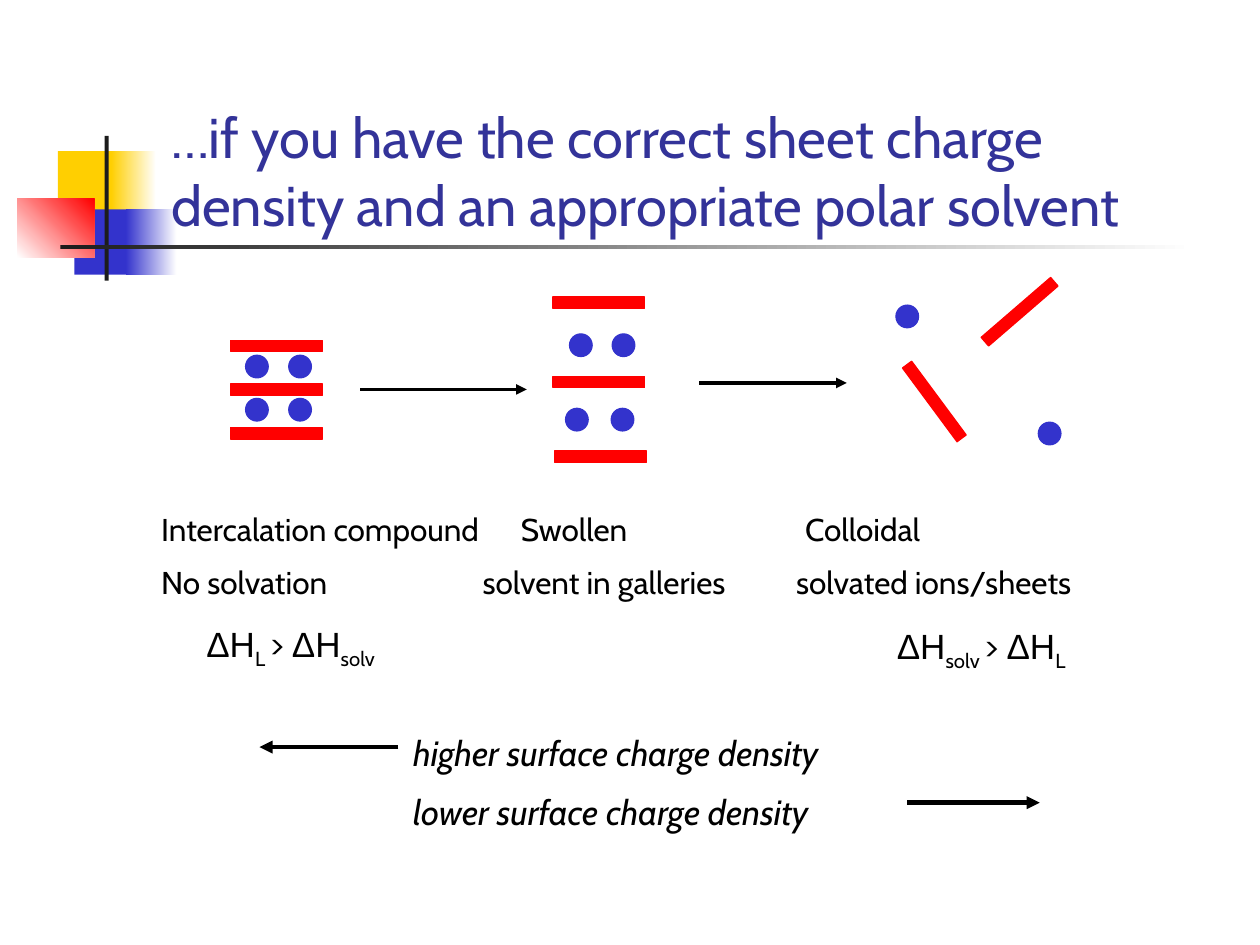
from lxml.etree import SubElement
from pptx import Presentation
from pptx.dml.color import RGBColor
from pptx.enum.shapes import MSO_CONNECTOR, MSO_SHAPE
from pptx.enum.text import MSO_ANCHOR
from pptx.oxml.ns import qn
from pptx.util import Cm, Pt

COLORS = {
    "yellow": "FFCF01",
    "blue": "3333CC",
    "red": "FF0000",
    "dark": "1C1C1C",
    "white": "FFFFFF",
    "black": "000000",
    "title": "333399",
}
RGB = {name: RGBColor.from_string(value) for name, value in COLORS.items()}

presentation = Presentation()
presentation.slide_width = Cm(25.4)
presentation.slide_height = Cm(19.05)
slide = presentation.slides.add_slide(presentation.slide_layouts[6])


def add_filled(kind, left, top, width, height, start, end=None, angle=0):
    """Add an unlined shape, with a gradient fill when an end colour is given."""
    shape = slide.shapes.add_shape(kind, Cm(left), Cm(top), Cm(width), Cm(height))
    shape.shadow.inherit = False
    shape.line.fill.background()
    if end is None:
        shape.fill.solid()
        shape.fill.fore_color.rgb = RGB[start]
    else:
        shape.fill.gradient()
        shape.fill.gradient_angle = angle
        for stop, color in zip(shape.fill.gradient_stops, (start, end)):
            stop.color.rgb = RGB[color]
    return shape


def add_text_frame(left, top, width, height, wrap=True):
    box = slide.shapes.add_textbox(Cm(left), Cm(top), Cm(width), Cm(height))
    box.text_frame.word_wrap = wrap
    return box.text_frame


# Corner decoration: left, top, width, height, colours, angle
decoration = [
    (1.17, 3.05, 1.22, 1.32, "yellow"),
    (2.24, 3.05, 0.91, 1.32, "yellow", "white"),
    (1.5, 4.22, 1.17, 1.32, "blue"),
    (2.54, 4.22, 1.02, 1.32, "blue", "white"),
    (0.35, 4.01, 1.55, 1.18, "white", "red", 45),
    (2.11, 2.74, 0.08, 2.92, "dark"),
    (1.22, 4.94, 22.86, 0.09, "dark", "white"),
]
for block in decoration:
    add_filled(MSO_SHAPE.RECTANGLE, *block)

# Title
title = add_text_frame(3.2, 1.73, 21.64, 3.18)
title.vertical_anchor = MSO_ANCHOR.BOTTOM
paragraph = title.paragraphs[0]
paragraph.text = "…if you have the correct sheet charge density and an appropriate polar solvent"
paragraph.font.name = "Cabin"
paragraph.font.size = Pt(32)
paragraph.font.color.rgb = RGB["title"]

# Sheets (left, top, rotation) and ions (left, top) of the three states
sheets = [(4.65, 6.86 + 0.88 * row, 0) for row in range(3)]
sheets += [(11.15, 5.99, 0), (11.15, 7.59, 0), (11.18, 9.09, 0)]
sheets += [(19.63, 6.17, 319.2), (17.91, 7.98, 53.5)]
ions = [(left, top) for top in (7.16, 8.03) for left in (4.95, 5.82)]
ions += [(11.48, 6.73), (12.34, 6.73), (11.4, 8.23), (12.32, 8.23)]
ions += [(18.06, 6.15), (20.93, 8.51)]

for left, top, rotation in sheets:
    sheet = add_filled(MSO_SHAPE.RECTANGLE, left, top, 1.85, 0.23, "red")
    sheet.rotation = rotation
    sheet.line.color.rgb = RGB["red"]
    sheet.line.width = Pt(0.75)
for left, top in ions:
    ion = add_filled(MSO_SHAPE.OVAL, left, top, 0.46, 0.46, "blue")
    ion.line.color.rgb = RGB["blue"]
    ion.line.width = Pt(0.63)

# Arrows: start, end, height on the slide, line width
arrows = [
    (7.26, 10.62, 7.85, 2),
    (14.1, 17.07, 7.72, 2),
    (8.03, 5.23, 15.06, 2.5),
    (18.29, 20.96, 16.18, 2.5),
]
for start, end, height, width in arrows:
    arrow = slide.shapes.add_connector(
        MSO_CONNECTOR.STRAIGHT, Cm(start), Cm(height), Cm(end), Cm(height))
    arrow.line.color.rgb = RGB["black"]
    arrow.line.width = Pt(width)
    SubElement(arrow.line._get_or_add_ln(), qn("a:tailEnd"), type="triangle")
    SubElement(arrow._element.spPr, qn("a:effectLst"))

# Text blocks: frame, size, gap before the second line, italic, lines with tab stops
text_blocks = [
    (add_text_frame(3, 10.16, 21.26, 2.18), 18, 8.5, False, [
        ("Intercalation compound\tSwollen\tColloidal", (7.25, 12.98)),
        ("No solvation\tsolvent in galleries\tsolvated ions/sheets", (6.48, 12.8)),
    ]),
    (add_text_frame(8.08, 14.63, 10.49, 2.03), 20, 9.5, True, [
        ("higher surface charge density", ()),
        ("lower surface charge density", ()),
    ]),
]
for frame, size, gap, italic, lines in text_blocks:
    for index, (text, stops) in enumerate(lines):
        paragraph = frame.add_paragraph() if index else frame.paragraphs[0]
        paragraph.text = text
        paragraph.space_before = Pt(gap if index else 0)
        paragraph.font.name = "Cabin"
        paragraph.font.size = Pt(size)
        paragraph.font.italic = italic
        paragraph.font.color.rgb = RGB["black"]
        if stops:
            properties = paragraph._p.get_or_add_pPr()
            tab_list = SubElement(properties, qn("a:tabLst"))
            properties.find(qn("a:defRPr")).addprevious(tab_list)
            for stop in stops:
                SubElement(tab_list, qn("a:tab"), pos=str(Cm(stop)), algn="l")

# Enthalpy comparisons: left, top, larger and smaller term
for left, top, larger, smaller in [(3.91, 12.42, "L", "solv"), (17.83, 12.47, "solv", "L")]:
    paragraph = add_text_frame(left, top, 4.83, 1.09, wrap=False).paragraphs[0]
    paragraph.font.size = Pt(20)
    paragraph.font.color.rgb = RGB["black"]
    pieces = [("ΔΗ", "Arial", 0), (larger + " ", "Cabin", -25000), ("> ", "Cabin", 0),
              ("ΔΗ", "Arial", 0), (smaller, "Cabin", -25000)]
    for text, font_name, baseline in pieces:
        run = paragraph.add_run()
        run.text = text
        run.font.name = font_name
        if baseline:
            run._r.get_or_add_rPr().set("baseline", str(baseline))

presentation.save("out.pptx")
